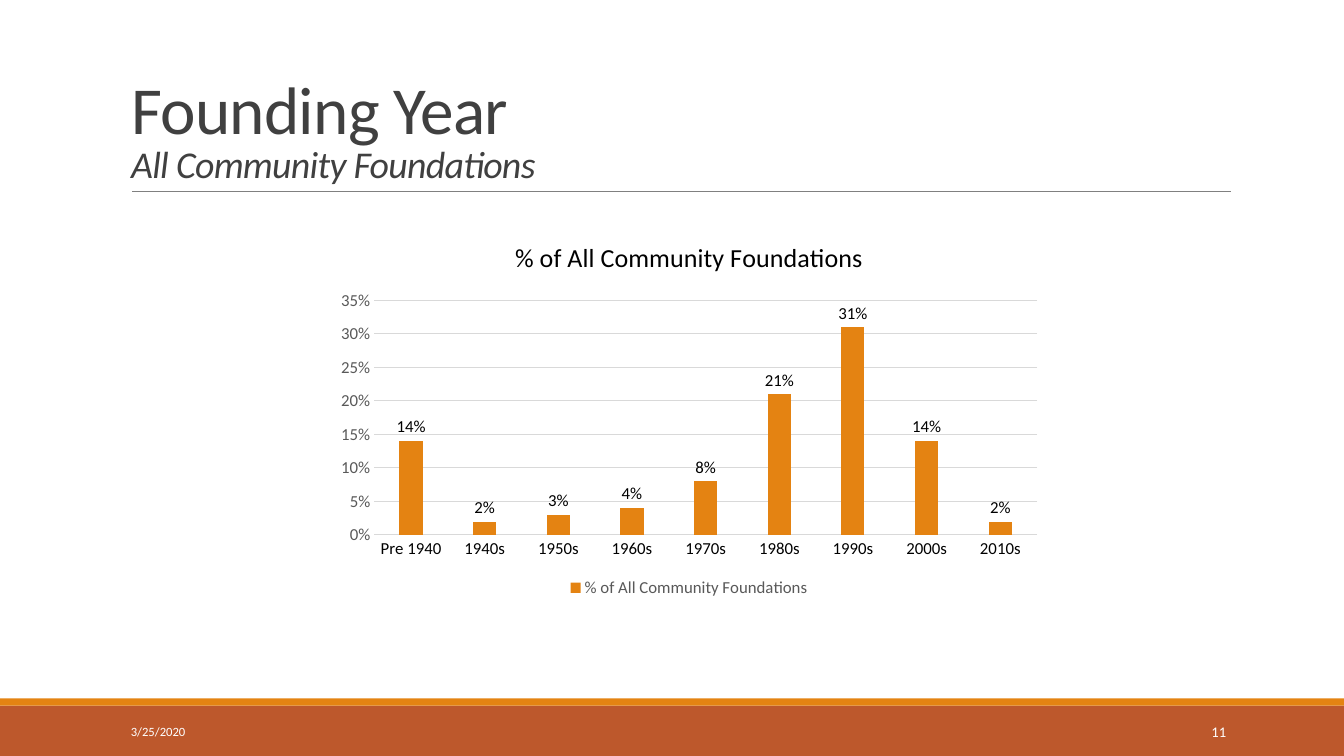
from pptx import Presentation
from pptx.chart.data import CategoryChartData as ChartData
from pptx.dml.color import RGBColor
from pptx.enum.chart import XL_CHART_TYPE as Kind, XL_LABEL_POSITION as LabelPos
from pptx.enum.chart import XL_LEGEND_POSITION as LegendPos, XL_TICK_MARK as Tick
from pptx.enum.shapes import MSO_CONNECTOR as Link, MSO_SHAPE as Shape
from pptx.enum.text import MSO_ANCHOR as Anchor, MSO_AUTO_SIZE as Fit, PP_ALIGN as Align
from pptx.oxml.ns import qn
from pptx.util import Inches, Pt

RUST = RGBColor(0xBD, 0x58, 0x2C)
ORANGE = RGBColor(0xE4, 0x83, 0x12)
RULE = RGBColor(0x80, 0x80, 0x80)
GRID = RGBColor(0xD9, 0xD9, 0xD9)
DARK = RGBColor(0x40, 0x40, 0x40)
GREY = RGBColor(0x59, 0x59, 0x59)
BLACK = RGBColor(0, 0, 0)
WHITE = RGBColor(0xFF, 0xFF, 0xFF)

WIDTH, HEIGHT = 13.33, 7.5
TITLE = [
    ("Founding Year", {"size": Pt(48)}),
    ("All Community Foundations", {"size": Pt(27), "italic": True}),
]
SERIES = "% of All Community Foundations"
SHARES = {
    "Pre 1940": 0.14, "1940s": 0.02, "1950s": 0.03, "1960s": 0.04, "1970s": 0.08,
    "1980s": 0.21, "1990s": 0.31, "2000s": 0.14, "2010s": 0.02,
}
BANDS = [(7, 0.5, RUST), (6.93, 0.07, ORANGE)]  # top, height, fill
FOOTER = [  # text, left, width, size, alignment
    ("3/25/2020", 1.2, 2.7, 9, Align.LEFT),
    ("11", 10.83, 1.43, 10.5, Align.RIGHT),
]


def box(*sizes):
    return [Inches(size) for size in sizes]


def style(font, color, **values):
    font.name = "Calibri"
    font.color.rgb = color
    for name, value in values.items():
        setattr(font, name, value)


def stroke(line, color, width):
    line.color.rgb = color
    line.width = Pt(width)


def add_frame(slide):
    for top, height, color in BANDS:
        band = slide.shapes.add_shape(Shape.RECTANGLE, *box(0, top, WIDTH, height))
        band.shadow.inherit = False
        band.fill.solid()
        band.fill.fore_color.rgb = color
        band.line.fill.background()
    rule = slide.shapes.add_connector(Link.STRAIGHT, *box(1.31, 1.9, 12.21, 1.9))
    stroke(rule.line, RULE, 0.5)
    props = rule._element.spPr
    props.append(props.makeelement(qn("a:effectLst"), {}))


def add_title(slide):
    title = slide.shapes.title
    title.left, title.top, title.width, title.height = box(1.2, 0.31, 11, 1.59)
    frame = title.text_frame
    frame.auto_size = Fit.NONE
    frame.word_wrap = True
    frame.vertical_anchor = Anchor.BOTTOM
    para = frame.paragraphs[0]
    para.alignment = Align.LEFT
    para.line_spacing = 0.85
    for i, (text, look) in enumerate(TITLE):
        if i:
            para.add_line_break()
        run = para.add_run()
        run.text = text
        style(run.font, DARK, **look)
        run._r.get_or_add_rPr().set("spc", "-50")


def add_chart(slide):
    data = ChartData(number_format="0%")
    data.categories = list(SHARES)
    data.add_series(SERIES, list(SHARES.values()))
    chart = slide.shapes.add_chart(
        Kind.COLUMN_CLUSTERED, *box(3.24, 2.2, 7.19, 3.77), data).chart
    style(chart.font, BLACK, size=Pt(10))

    chart.has_title = True
    para = chart.chart_title.text_frame.paragraphs[0]
    run = para.add_run()
    run.text = SERIES
    style(run.font, BLACK, size=Pt(18.6), bold=False)

    chart.has_legend = True
    legend = chart.legend
    legend.position = LegendPos.BOTTOM
    legend.include_in_layout = False
    style(legend.font, GREY, size=Pt(12))

    cats, vals = chart.category_axis, chart.value_axis
    for axis, color in ((cats, BLACK), (vals, GREY)):
        axis.major_tick_mark = axis.minor_tick_mark = Tick.NONE
        style(axis.tick_labels.font, color, size=Pt(12))
    stroke(cats.format.line, GRID, 0.75)
    vals.format.line.fill.background()
    vals.has_major_gridlines = True
    stroke(vals.major_gridlines.format.line, GRID, 0.75)
    vals.minimum_scale, vals.maximum_scale, vals.major_unit = 0, 0.35, 0.05

    plot = chart.plots[0]
    plot.vary_by_categories = False
    plot.gap_width, plot.overlap = 219, -27
    bars = plot.series[0]
    bars.format.fill.solid()
    bars.format.fill.fore_color.rgb = ORANGE
    labels = bars.data_labels
    labels.show_value = True
    labels.position = LabelPos.OUTSIDE_END
    style(labels.font, BLACK, size=Pt(12))
    for item in (vals.tick_labels, labels):
        item.number_format = "0%"
        item.number_format_is_linked = False


def add_footer(slide):
    for text, left, width, size, align in FOOTER:
        frame = slide.shapes.add_textbox(*box(left, 7.06, width, 0.4)).text_frame
        frame.word_wrap = True
        frame.vertical_anchor = Anchor.MIDDLE
        para = frame.paragraphs[0]
        para.alignment = align
        run = para.add_run()
        run.text = text
        style(run.font, WHITE, size=Pt(size))


def main():
    deck = Presentation()
    deck.slide_width, deck.slide_height = box(WIDTH, HEIGHT)
    slide = deck.slides.add_slide(deck.slide_layouts[5])
    for add in (add_frame, add_title, add_chart, add_footer):
        add(slide)
    deck.save("out.pptx")


if __name__ == "__main__":
    main()
